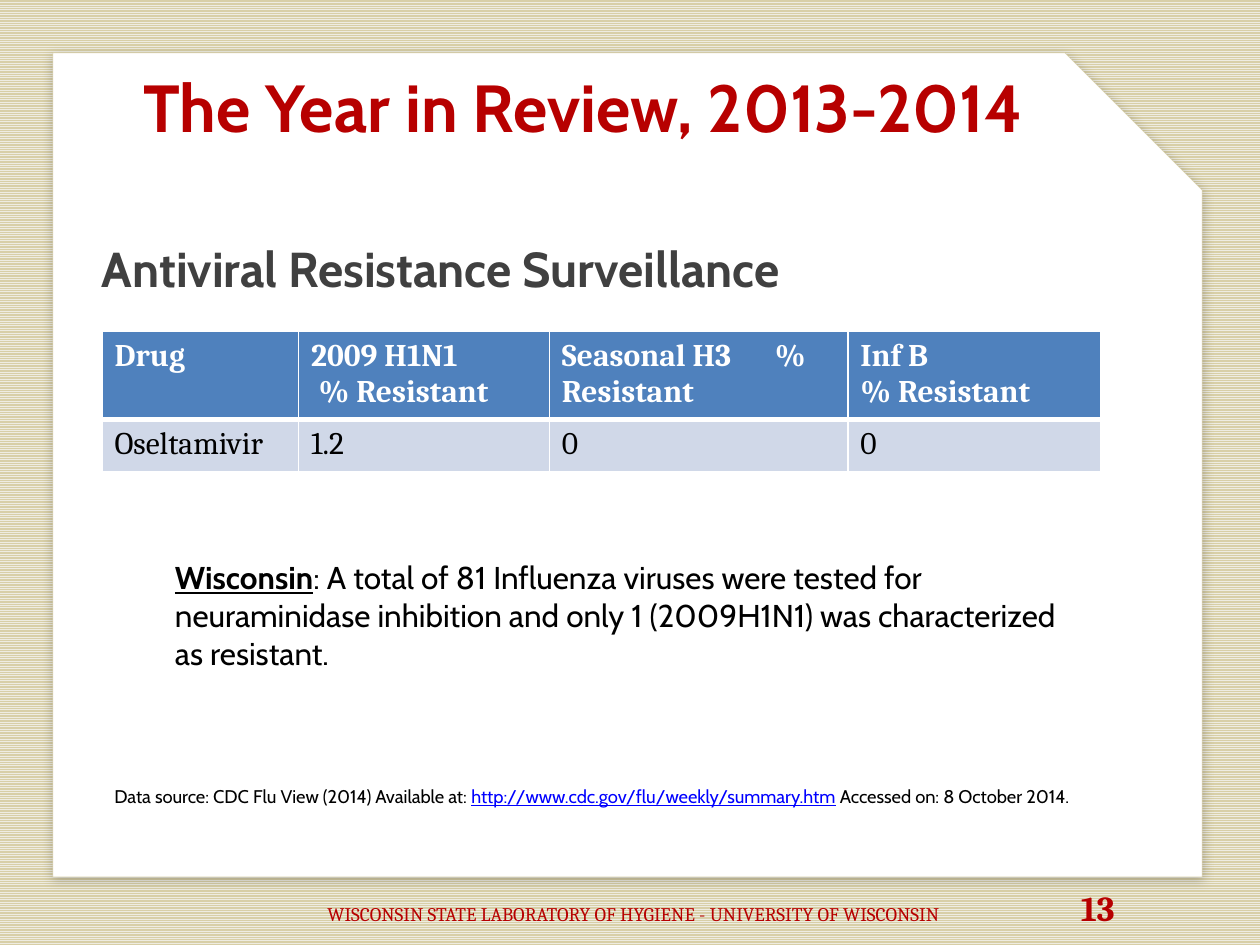
from lxml.etree import SubElement
from pptx import Presentation
from pptx.dml.color import RGBColor
from pptx.enum.dml import MSO_PATTERN
from pptx.enum.text import MSO_ANCHOR, PP_ALIGN
from pptx.oxml.ns import qn
from pptx.util import Inches, Pt

COLORS = {
    "sand": "D8CFA7", "stripe": "EEECE1", "white": "FFFFFF", "black": "000000",
    "red": "B70000", "gray": "404040", "link": "0000FF",
    "header": "4F81BD", "band": "D0D8E8",
}
COLUMNS, ROWS = 100, 75  # slide grid, one unit is a tenth of an inch
UNIT = Inches(10) // COLUMNS


def color(name):
    return RGBColor.from_string(COLORS[name])


def grid(*units):
    return [round(unit * UNIT) for unit in units]


def add_span(para, text, size=18, face="Cabin", ink="black", bold=False, underline=False):
    span = para.add_run()
    span.text = text
    font = span.font
    font.size, font.name = Pt(size), face
    font.bold, font.underline = bold, underline
    font.color.rgb = color(ink)


def add_tabs(para, stops):
    tab_list = SubElement(para._p.get_or_add_pPr(), qn("a:tabLst"))
    for stop in grid(*stops):
        SubElement(tab_list, qn("a:tab"), pos=str(stop), algn="l")


def add_text(page, area, spans, align=PP_ALIGN.LEFT, anchor=MSO_ANCHOR.TOP,
             inset=True, tabs=()):
    """Place one paragraph made of (text, format) pairs."""
    frame = page.shapes.add_textbox(*grid(*area)).text_frame
    frame.word_wrap = True
    frame.vertical_anchor = anchor
    if not inset:
        frame.margin_left = frame.margin_right = 0
        frame.margin_top = frame.margin_bottom = 0
    para = frame.paragraphs[0]
    para.alignment = align
    if tabs:
        add_tabs(para, tabs)
    for text, style in spans:
        add_span(para, text, **style)


def add_background(page):
    fill = page.background.fill
    fill.patterned()
    fill.pattern = MSO_PATTERN.NARROW_HORIZONTAL
    fill.fore_color.rgb = color("stripe")
    fill.back_color.rgb = color("sand")


def add_sheet(page, area, cut):
    """White sheet with its top right corner cut off."""
    left, top, width, height = area
    right, bottom = left + width, top + height
    outline = [(right - cut, top), (right, top + cut), (right, bottom), (left, bottom)]
    builder = page.shapes.build_freeform(*grid(left, top))
    builder.add_line_segments([grid(*point) for point in outline], close=True)
    sheet = builder.convert_to_shape()
    sheet.fill.solid()
    sheet.fill.fore_color.rgb = color("white")
    sheet.line.color.rgb = color("sand")
    sheet.line.width = Pt(0.25)
    # Soft shadow below the sheet
    sheet.shadow.inherit = False
    effects = sheet._element.spPr.find(qn("a:effectLst"))
    shadow = SubElement(effects, qn("a:outerShdw"), blurRad=str(Pt(6)), dist=str(Pt(2)),
                        dir=str(80 * 60000), algn="tl", rotWithShape="0")
    tint = SubElement(shadow, qn("a:srgbClr"), val=COLORS["black"])
    SubElement(tint, qn("a:alpha"), val="22000")


def set_borders(cell, bottom=1, top=1):
    properties = cell._tc.get_or_add_tcPr()
    for side, width in (("L", 1), ("R", 1), ("T", top), ("B", bottom)):
        line = SubElement(properties, qn(f"a:ln{side}"), w=str(Pt(width)))
        fill = SubElement(line, qn("a:solidFill"))
        SubElement(fill, qn("a:srgbClr"), val=COLORS["white"])


def add_drug_table(page, area, widths):
    rows = [
        ["Drug", "2009 H1N1\n% Resistant", "Seasonal H3\t% Resistant", "Inf B\n% Resistant"],
        ["Oseltamivir", "1.2", "0", "0"],
    ]
    table = page.shapes.add_table(len(rows), len(widths), *grid(*area)).table
    for column, width in zip(table.columns, grid(*widths)):
        column.width = width
    for row_index, texts in enumerate(rows):
        is_header = row_index == 0
        for column_index, text in enumerate(texts):
            cell = table.cell(row_index, column_index)
            set_borders(cell, bottom=3 if is_header else 1, top=1 if is_header else 3)
            cell.fill.solid()
            cell.fill.fore_color.rgb = color("header" if is_header else "band")
            for line_index, line in enumerate(text.split("\n")):
                frame = cell.text_frame
                para = frame.add_paragraph() if line_index else frame.paragraphs[0]
                if line_index and column_index == 1:  # slight indent under 2009 H1N1
                    para._p.get_or_add_pPr().set("marL", str(grid(0.6)[0]))
                if "\t" in line:
                    add_tabs(para, [16.9])
                add_span(para, line, face="Cambria", bold=is_header,
                         ink="white" if is_header else "black")


def add_headings(page, title_area, subtitle_area):
    add_text(page, title_area,
             [("The Year in Review, 2013-2014", dict(size=38, ink="red", bold=True))],
             align=PP_ALIGN.CENTER, inset=False)
    add_text(page, subtitle_area,
             [("Antiviral Resistance Surveillance", dict(size=28, ink="gray", bold=True))],
             inset=False)


def add_notes(page, finding_area, source_area):
    add_text(page, finding_area, [
        ("Wisconsin", dict(bold=True, underline=True)),
        (": A total of 81 Influenza viruses were tested for neuraminidase inhibition "
         "and only 1 (2009H1N1) was characterized as resistant.", {}),
    ])
    add_text(page, source_area, [
        ("Data source: CDC Flu View (2014) Available at: ", dict(size=10.5)),
        ("http://www.cdc.gov/flu/weekly/summary.htm",
         dict(size=10.5, ink="link", underline=True)),
        (" Accessed on: 8 October 2014.", dict(size=10.5)),
    ])


def add_footer(page, area):
    add_text(page, area, [
        ("\tWISCONSIN STATE LABORATORY OF HYGIENE - UNIVERSITY OF WISCONSIN",
         dict(size=11, face="Cambria", ink="red")),
        ("\t13", dict(size=20, face="Cambria", ink="red", bold=True)),
    ], anchor=MSO_ANCHOR.MIDDLE, tabs=[20.8, 80.6])


def main():
    deck = Presentation()
    deck.slide_width, deck.slide_height = grid(COLUMNS, ROWS)
    page = deck.slides.add_slide(deck.slide_layouts[6])
    add_background(page)
    add_sheet(page, (4.2, 4.2, 91.2, 65.4), cut=10.9)
    add_headings(page, (3, 5.2, 86.6, 8.5), (8.1, 18.9, 83.6, 46))
    add_drug_table(page, (8.1, 26.3, 79.3, 8.2), (15.6, 19.9, 23.7, 20.1))
    add_notes(page, (12.9, 43.8, 72.5, 10.1), (8.1, 61.8, 83.6, 2.8))
    add_footer(page, (4.2, 69.2, 91.2, 5.7))
    deck.save("out.pptx")


if __name__ == "__main__":
    main()
